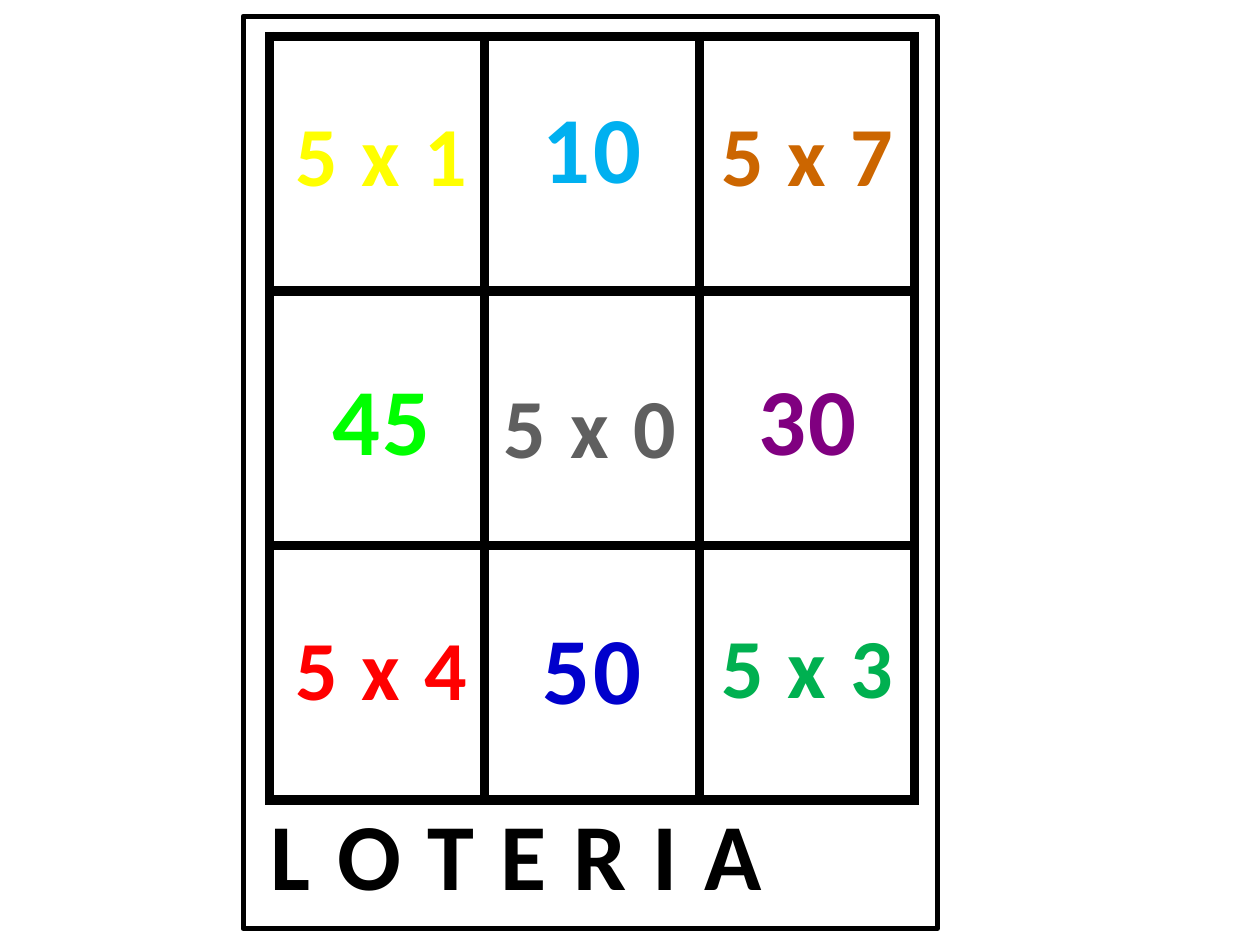
from dataclasses import dataclass

from lxml import etree
from pptx import Presentation
from pptx.dml.color import RGBColor
from pptx.enum.shapes import MSO_SHAPE
from pptx.enum.text import MSO_ANCHOR, MSO_AUTO_SIZE, PP_ALIGN
from pptx.oxml.ns import qn
from pptx.slide import Slide
from pptx.util import Inches, Pt

RECTANGLE = MSO_SHAPE.RECTANGLE
CENTER = PP_ALIGN.CENTER
TOP = MSO_ANCHOR.TOP
FIT_SHAPE = MSO_AUTO_SIZE.SHAPE_TO_FIT_TEXT

GRID_SIZE = 3
GRID_LEFT, GRID_TOP = 2.14, 0.29
COLUMN_WIDTH, ROW_HEIGHT = 5.12 / GRID_SIZE, 2.02
BORDER_POINTS = 6
BLACK = "000000"
LETTER_SPACING = 150  # hundredths of a point


@dataclass(frozen=True)
class Label:
    """Text centred at a point counted in grid columns and rows."""
    text: str
    column: float
    row: float
    color: str
    size: int
    width: float
    height: float


def product(text: str, column: float, row: float, color: str) -> Label:
    return Label(text, column, row, color, 48, 1.6, 0.91)


def result(text: str, column: float, row: float, color: str) -> Label:
    return Label(text, column, row, color, 54, 1.01, 1.01)


LABELS = [
    product("5 x 1", 0.52, 0.46, "FFFF00"),
    result("10", 1.5, 0.43, "00B0F0"),
    product("5 x 7", 2.5, 0.46, "CC6600"),
    result("45", 0.52, 1.5, "00FF00"),
    product("5 x 0", 1.49, 1.53, "5F5F5F"),
    result("30", 2.5, 1.5, "800080"),
    product("5 x 4", 0.52, 2.48, "FF0000"),
    result("50", 1.5, 2.48, "0000CC"),
    product("5 x 3", 2.5, 2.47, "00B050"),
    Label("L O T E R I A", 1.15, 3.21, BLACK, 54, 4.17, 1.01),
]


def rgb(color: str) -> RGBColor:
    return RGBColor.from_string(color)


def add_cell_borders(cell) -> None:
    properties = cell._tc.get_or_add_tcPr()
    for index, side in enumerate(("lnL", "lnR", "lnT", "lnB")):
        line = etree.Element(qn(f"a:{side}"), w=str(Pt(BORDER_POINTS)))
        fill = etree.SubElement(line, qn("a:solidFill"))
        etree.SubElement(fill, qn("a:srgbClr"), val=BLACK)
        properties.insert(index, line)


def add_grid(slide: Slide) -> None:
    table = slide.shapes.add_table(
        GRID_SIZE, GRID_SIZE, Inches(GRID_LEFT), Inches(GRID_TOP),
        Inches(GRID_SIZE * COLUMN_WIDTH), Inches(GRID_SIZE * ROW_HEIGHT),
    ).table
    table.first_row = table.horz_banding = False
    for column in table.columns:
        column.width = Inches(COLUMN_WIDTH)
    for row in table.rows:
        row.height = Inches(ROW_HEIGHT)
    for cell in table.iter_cells():
        cell.fill.background()
        add_cell_borders(cell)


def add_card_frame(slide: Slide) -> None:
    frame = slide.shapes.add_shape(
        RECTANGLE, Inches(1.93), Inches(0.13), Inches(5.51), Inches(7.24))
    frame.shadow.inherit = False
    frame.fill.background()
    frame.line.color.rgb = rgb(BLACK)
    frame.line.width = Pt(3)


def add_label(slide: Slide, label: Label) -> None:
    left = GRID_LEFT + label.column * COLUMN_WIDTH - label.width / 2
    top = GRID_TOP + label.row * ROW_HEIGHT - label.height / 2
    box = slide.shapes.add_textbox(
        Inches(left), Inches(top), Inches(label.width), Inches(label.height))
    text_frame = box.text_frame
    text_frame.word_wrap = False
    text_frame.auto_size = FIT_SHAPE
    text_frame.vertical_anchor = TOP
    paragraph = text_frame.paragraphs[0]
    paragraph.alignment = CENTER
    run = paragraph.add_run()
    run.text = label.text
    run.font._element.set("spc", str(LETTER_SPACING))
    font = paragraph.font
    font.name = "Calibri"
    font.size = Pt(label.size)
    font.bold = True
    font.color.rgb = rgb(label.color)


def main() -> None:
    presentation = Presentation()
    presentation.slide_width = Inches(10)
    presentation.slide_height = Inches(7.5)
    slide = presentation.slides.add_slide(presentation.slide_layouts[6])
    add_grid(slide)
    add_card_frame(slide)
    for label in LABELS:
        add_label(slide, label)
    presentation.save("out.pptx")


if __name__ == "__main__":
    main()
